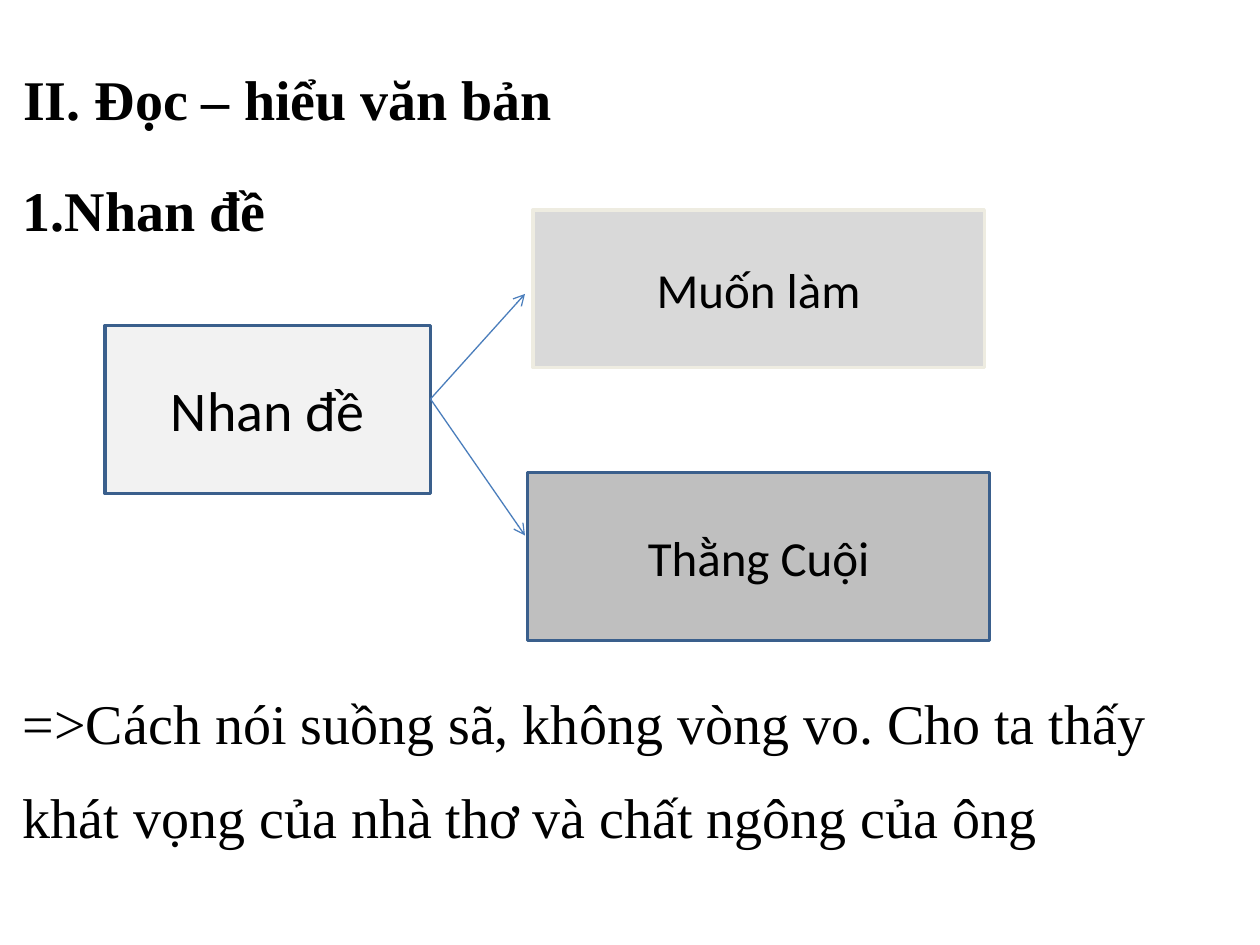
from lxml import etree
from pptx import Presentation
from pptx.dml.color import RGBColor
from pptx.enum.shapes import MSO_CONNECTOR, MSO_SHAPE
from pptx.enum.text import MSO_ANCHOR, MSO_AUTO_SIZE, PP_ALIGN
from pptx.oxml.ns import qn
from pptx.util import Inches, Pt

RECTANGLE, STRAIGHT = MSO_SHAPE.RECTANGLE, MSO_CONNECTOR.STRAIGHT
TOP, MIDDLE = MSO_ANCHOR.TOP, MSO_ANCHOR.MIDDLE
LEFT, CENTER = PP_ALIGN.LEFT, PP_ALIGN.CENTER
NO_AUTOFIT = MSO_AUTO_SIZE.NONE

BLACK = RGBColor(0x00, 0x00, 0x00)
PALE_GREY = RGBColor(0xF2, 0xF2, 0xF2)
LIGHT_GREY = RGBColor(0xD9, 0xD9, 0xD9)
MID_GREY = RGBColor(0xBF, 0xBF, 0xBF)
CREAM = RGBColor(0xEE, 0xEC, 0xE1)
NAVY = RGBColor(0x3A, 0x5F, 0x8C)
BLUE = RGBColor(0x4B, 0x7E, 0xBC)

COLUMNS, ROWS = 120, 90
CELL = Inches(10) // COLUMNS


def cells(*counts):
    """Turn counts of grid cells into lengths."""
    return [int(count * CELL) for count in counts]


def format_text(frame, text, font, size, align, bold=False):
    frame.word_wrap = True
    frame.auto_size = NO_AUTOFIT
    frame.text = text
    paragraph = frame.paragraphs[0]
    paragraph.alignment = align
    paragraph.font.name = font
    paragraph.font.size = Pt(size)
    paragraph.font.bold = bold
    paragraph.font.color.rgb = BLACK
    return paragraph


def write_line(shape, box, text, bold):
    shape.left, shape.top, shape.width, shape.height = cells(*box)
    shape.text_frame.vertical_anchor = TOP
    paragraph = format_text(shape.text_frame, text, "Times New Roman", 32, LEFT, bold)
    paragraph.line_spacing = 1.4
    paragraph.space_before = Pt(0)


def add_node(slide, box, text, size, fill, outline):
    node = slide.shapes.add_shape(RECTANGLE, *cells(*box))
    node.shadow.inherit = False
    node.fill.solid()
    node.fill.fore_color.rgb = fill
    node.line.color.rgb = outline
    node.line.width = Pt(2)
    node.text_frame.vertical_anchor = MIDDLE
    format_text(node.text_frame, text, "Calibri", size, CENTER)


def add_arrow(slide, start, end):
    arrow = slide.shapes.add_connector(STRAIGHT, *cells(*start, *end))
    arrow.line.color.rgb = BLUE
    arrow.line.width = Pt(0.75)
    etree.SubElement(arrow.line._get_or_add_ln(), qn("a:tailEnd"), type="arrow")
    etree.SubElement(arrow._element.spPr, qn("a:effectLst"))


def add_title_diagram(slide, left, top):
    """Split the poem's title into its two parts, from the given corner."""
    nodes = [
        (0, 11, 31, 16, "Nhan đề", 32, PALE_GREY, NAVY),
        (40.75, 0, 43, 15, "Muốn làm", 28, LIGHT_GREY, CREAM),
        (40.25, 25, 44, 16, "Thằng Cuội", 28, MID_GREY, NAVY),
    ]
    for x, y, width, height, *style in nodes:
        add_node(slide, (left + x, top + y, width, height), *style)
    for tip in (8, 31):
        add_arrow(slide, (left + 31, top + 18), (left + 40, top + tip))


def add_lesson_text(slide, left, top, width):
    title = slide.shapes.title
    heading, conclusion = (slide.shapes.add_textbox(0, 0, 0, 0) for _ in range(2))
    lines = [
        (title, 0, 10, "II. Đọc – hiểu văn bản", True),
        (heading, 10.6, 10, "1.Nhan đề", True),
        (conclusion, 59.4, 20,
         "=>Cách nói suồng sã, không vòng vo. Cho ta thấy khát vọng "
         "của nhà thơ và chất ngông của ông", False),
    ]
    for shape, y, height, text, bold in lines:
        write_line(shape, (left, top + y, width, height), text, bold)


def main():
    deck = Presentation()
    deck.slide_width, deck.slide_height = cells(COLUMNS, ROWS)
    slide = deck.slides.add_slide(deck.slide_layouts[5])
    add_lesson_text(slide, left=1, top=3, width=113)
    add_title_diagram(slide, left=10, top=20)
    deck.save("out.pptx")


if __name__ == "__main__":
    main()
